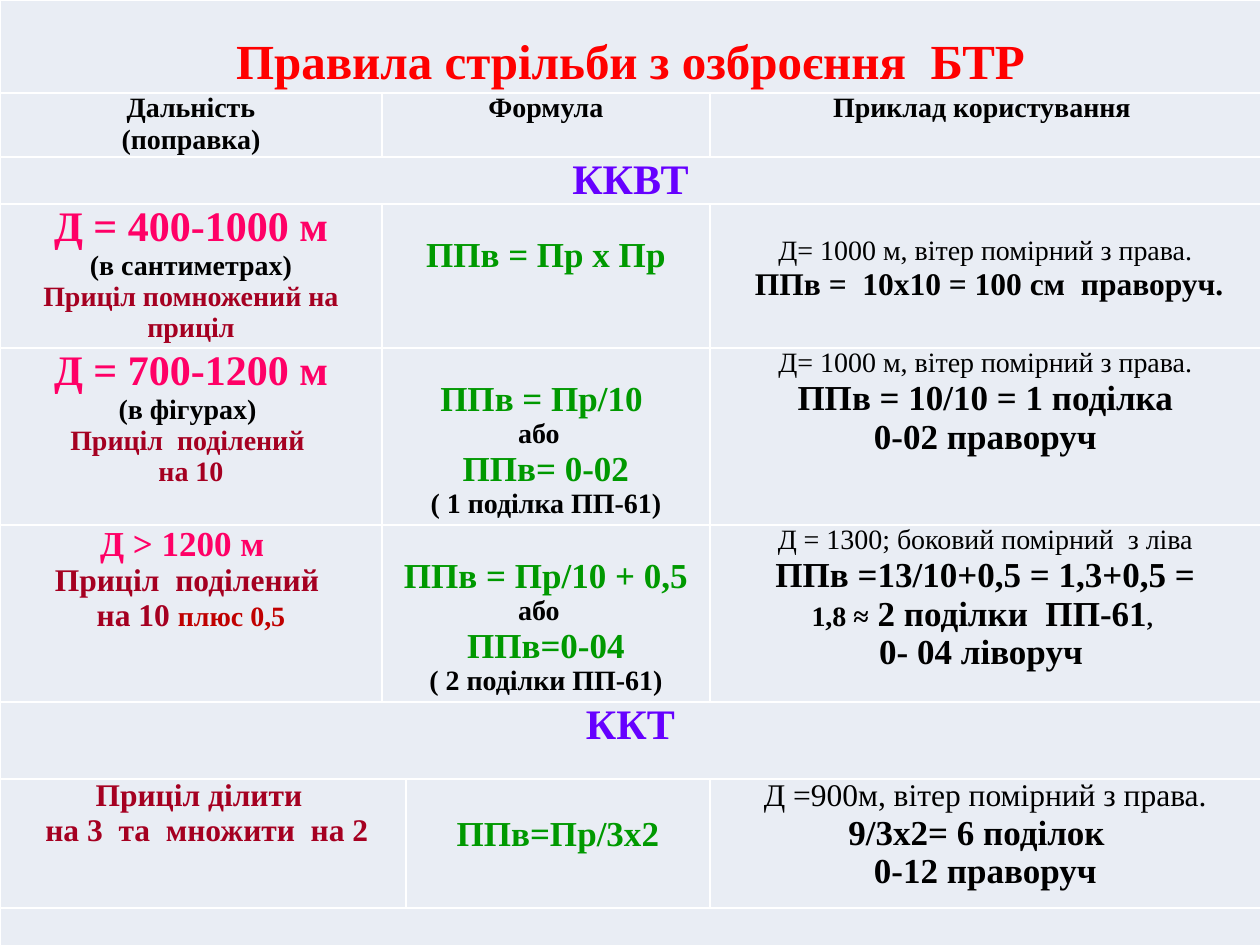
from lxml import etree
from pptx import Presentation
from pptx.dml.color import RGBColor
from pptx.enum.text import MSO_ANCHOR, PP_ALIGN
from pptx.oxml.ns import qn
from pptx.util import Pt

SCALE = 914400 / 126
CENTER = PP_ALIGN.CENTER
TOP = MSO_ANCHOR.TOP
FONT = "Times New Roman"
COLORS = {
    "black": "000000", "red": "FF0000", "violet": "6600FF", "pink": "FF0066",
    "wine": "A50021", "brick": "C00000", "green": "009900", "white": "FFFFFF",
    "cell": "E9EDF4", "sky": "9AB5E4", "pale": "E1E8F5",
}
COLS = [382, 24, 304, 551]
ROWS = [93, 64, 47, 144, 177, 177, 77, 129, 132]
FULL = [0, 2, 6, 8]
SPANS = [(r, 0, 3) for r in FULL] + [(r, 1, 2) for r in (1, 3, 4, 5)] + [(7, 0, 1)]
DROPS = {(0, 0): 36, (3, 1): 32, (3, 3): 32, (4, 1): 32, (5, 1): 32, (7, 2): 36}


def run(text, size=16, color="black", bold=True):
    return text, {"name": FONT, "size": Pt(size), "bold": bold}, color


def plain(text, size=16):
    return [run(text, size, bold=False)]


def bold(text, size=16, color="black"):
    return [run(text, size, color)]


def rule(first, second, note):
    return [bold(first, 20, "green"), bold("або  "),
            bold(second, 20, "green"), bold(note)]


WIND = "Д= 1000 м, вітер помірний з права."
TEXTS = {
    (0, 0): [bold("Правила стрільби з озброєння  БТР", 28, "red")],
    (1, 0): [bold("Дальність"), bold("(поправка)")],
    (1, 1): [bold("Формула")],
    (1, 3): [bold("Приклад користування ")],
    (2, 0): [bold("ККВТ", 24, "violet")],
    (3, 0): [bold("Д = 400-1000 м", 24, "pink"), bold("(в сантиметрах)"),
             bold("Приціл помножений на приціл", 16, "wine")],
    (3, 1): [bold("ППв = Пр х Пр", 20, "green")],
    (3, 3): [plain(WIND), bold(" ППв =  10х10 = 100 см  праворуч.", 18)],
    (4, 0): [bold("Д = 700-1200 м", 24, "pink"), bold("(в фігурах) "),
             bold("Приціл  поділений ", 16, "wine"), bold("на 10", 16, "wine")],
    (4, 1): rule("ППв = Пр/10 ", "ППв= 0-02", "( 1 поділка ПП-61)"),
    (4, 3): [plain(WIND), bold("ППв = 10/10 = 1 поділка", 20),
             bold("0-02 праворуч", 20)],
    (5, 0): [bold("Д > 1200 м  ", 20, "pink"),
             bold("Приціл  поділений ", 18, "wine"),
             [run("на 10 ", 18, "wine"), run("плюс 0,5", 16, "brick")]],
    (5, 1): rule("ППв = Пр/10 + 0,5", "ППв=0-04", "( 2 поділки ПП-61)"),
    (5, 3): [plain("Д = 1300; боковий помірний  з ліва"),
             bold("ППв =13/10+0,5 = 1,3+0,5 =", 20),
             [run("1,8 ≈"), run(" 2 поділки  ПП-61", 20), run(", ", 14)],
             bold("0- 04 ліворуч ", 20)],
    (6, 0): [bold("ККТ", 24, "violet")],
    (7, 0): [bold("Приціл ділити ", 18, "wine"),
             bold(" на 3  та  множити  на 2", 18, "wine")],
    (7, 2): [bold("ППв=Пр/3х2", 20, "green")],
    (7, 3): [plain("Д =900м, вітер помірний з права.", 18),
             bold("9/3х2= 6 поділок  ", 20), bold("0-12 праворуч", 20)],
}


def px(n):
    return round(n * SCALE)


def rgb(key):
    return RGBColor.from_string(COLORS[key])


class Page:
    def __init__(self, deck):
        self.slide = deck.slides.add_slide(deck.slide_layouts[6])

    def back(self, start, end):
        fill = self.slide.background.fill
        fill.gradient()
        fill.gradient_angle = 270
        for stop, key in zip(fill.gradient_stops, (start, end)):
            stop.color.rgb = rgb(key)

    def table(self, cols, rows, spans):
        frame = self.slide.shapes.add_table(
            len(rows), len(cols), 0, 0, px(sum(cols)), px(sum(rows)))
        grid = frame.table
        grid.first_row = grid.horz_banding = False
        for col, width in zip(grid.columns, cols):
            col.width = px(width)
        for row, height in zip(grid.rows, rows):
            row.height = px(height)
        for row, left, right in spans:
            grid.cell(row, left).merge(grid.cell(row, right))
        for cell in grid.iter_cells():
            self.box(cell)
        return grid

    def box(self, cell):
        form = {"margin_left": px(9), "margin_right": px(9), "margin_top": 0,
                "margin_bottom": 0, "vertical_anchor": TOP}
        for key, value in form.items():
            setattr(cell, key, value)
        cell.fill.solid()
        cell.fill.fore_color.rgb = rgb("cell")
        props = cell._tc.get_or_add_tcPr()
        for spot, side in enumerate(("lnL", "lnR", "lnT", "lnB")):
            line = etree.Element(qn("a:" + side), w=str(Pt(1)))
            paint = etree.SubElement(line, qn("a:solidFill"))
            etree.SubElement(paint, qn("a:srgbClr"), val=COLORS["white"])
            props.insert(spot, line)

    def text(self, cell, lines, drop):
        cell.margin_top = px(drop)
        frame = cell.text_frame
        for spot, line in enumerate(lines):
            para = frame.add_paragraph() if spot else frame.paragraphs[0]
            para.alignment = CENTER
            for words, form, color in line:
                part = para.add_run()
                part.text = words
                for key, value in form.items():
                    setattr(part.font, key, value)
                part.font.color.rgb = rgb(color)


def main():
    deck = Presentation()
    deck.slide_width, deck.slide_height = px(1260), px(945)
    page = Page(deck)
    page.back("sky", "pale")
    grid = page.table(COLS, ROWS, SPANS)
    for spot, lines in TEXTS.items():
        page.text(grid.cell(*spot), lines, DROPS.get(spot, 0))
    deck.save("out.pptx")


if __name__ == "__main__":
    main()
